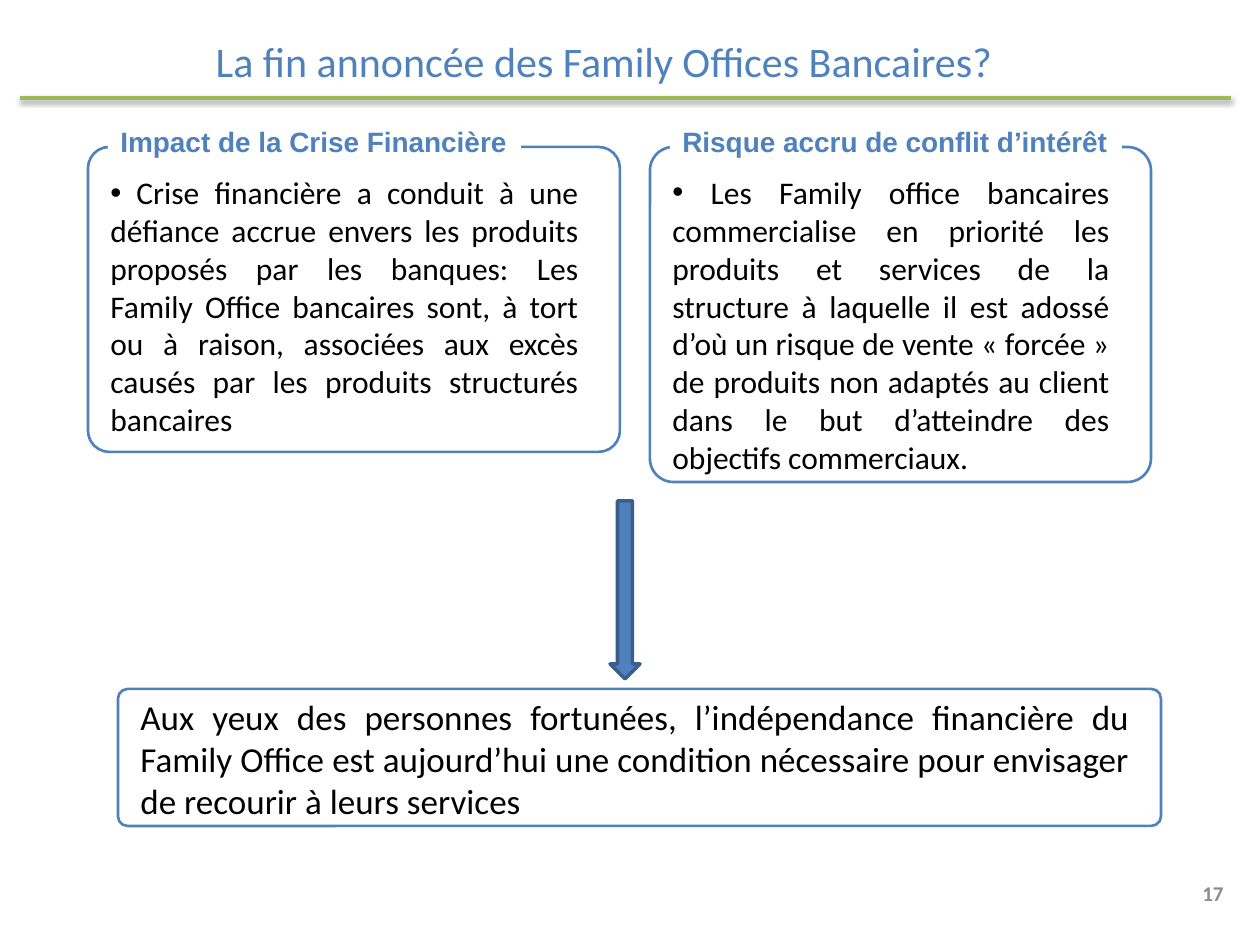
from dataclasses import dataclass

from lxml.etree import SubElement
from pptx import Presentation
from pptx.dml.color import RGBColor
from pptx.enum.shapes import MSO_CONNECTOR, MSO_SHAPE
from pptx.enum.text import MSO_ANCHOR, PP_ALIGN
from pptx.oxml.ns import qn
from pptx.util import Pt

SCALE = 914400 / 126


@dataclass(frozen=True)
class Theme:
    blue: str = "4F81BD"
    navy: str = "3A5F8C"
    green: str = "9BBB59"
    white: str = "FFFFFF"
    black: str = "000000"
    gray: str = "8C8C8C"
    font: str = "Calibri"
    label: str = "Arial"
    title: int = 24
    head: int = 16
    body: int = 18
    close: int = 20
    page: int = 12


THEME = Theme()


def emu(*sizes):
    return [round(size * SCALE) for size in sizes]


def color(code):
    return RGBColor.from_string(code)


def add_text(slide, box, text, size=THEME.body, ink=THEME.black, font=THEME.font,
             bold=False, align=PP_ALIGN.LEFT, anchor=MSO_ANCHOR.TOP,
             wrap=True, bullet=False, fill=None):
    shape = slide.shapes.add_textbox(*emu(*box))
    if fill:
        shape.fill.solid()
        shape.fill.fore_color.rgb = color(fill)
    frame = shape.text_frame
    frame.word_wrap = wrap
    frame.vertical_anchor = anchor
    para = frame.paragraphs[0]
    para.alignment = align
    if bullet:
        props = para._p.get_or_add_pPr()
        SubElement(props, qn("a:buFont"), typeface="Arial")
        SubElement(props, qn("a:buChar"), char="•")
    run = para.add_run()
    run.text = text
    run.font.size = Pt(size)
    run.font.name = font
    run.font.bold = bold
    run.font.color.rgb = color(ink)


def add_form(slide, kind, box, line, width, fill=None):
    shape = slide.shapes.add_shape(kind, *emu(*box))
    shape.shadow.inherit = False
    if fill:
        shape.fill.solid()
        shape.fill.fore_color.rgb = color(fill)
    else:
        shape.fill.background()
    shape.line.color.rgb = color(line)
    shape.line.width = Pt(width)
    return shape


def add_frame(slide, box):
    frame = add_form(slide, MSO_SHAPE.ROUNDED_RECTANGLE, box, THEME.blue, 1.5)
    frame.adjustments[0] = 0.07


def add_header(slide, box, text):
    left, top, width, height = box
    add_text(slide, (left + 174, top, 820, 63), text, size=THEME.title,
             ink=THEME.blue, align=PP_ALIGN.CENTER, wrap=False)
    base = top + height
    rule = slide.shapes.add_connector(
        MSO_CONNECTOR.STRAIGHT, *emu(left, base, left + width, base))
    rule.line.color.rgb = color(THEME.green)
    rule.line.width = Pt(2)
    effects = SubElement(rule._element.spPr, qn("a:effectLst"))
    shadow = SubElement(effects, qn("a:outerShdw"), blurRad="40000",
                        dist="20000", dir="5400000", rotWithShape="0")
    tint = SubElement(shadow, qn("a:srgbClr"), val=THEME.black)
    SubElement(tint, qn("a:alpha"), val="38000")


def add_panel(slide, box, head, span, text):
    left, top, width, height = box
    add_frame(slide, box)
    add_text(slide, (left + 20, top - 29, span, 84), head, size=THEME.head,
             ink=THEME.blue, font=THEME.label, bold=True, fill=THEME.white)
    add_text(slide, (left + 10, top + 20, width - 39, height - 20), text,
             align=PP_ALIGN.JUSTIFY, bullet=True)


def add_close(slide, box, text):
    left, top, width, height = box
    add_frame(slide, box)
    add_text(slide, (left + 10, top, width - 29, height), text,
             size=THEME.close, align=PP_ALIGN.JUSTIFY)


def main():
    deck = Presentation()
    deck.slide_width, deck.slide_height = emu(1260, 945)
    slide = deck.slides.add_slide(deck.slide_layouts[6])
    add_text(slide, (1152, 857, 84, 72), "17", size=THEME.page, ink=THEME.gray,
             bold=True, align=PP_ALIGN.RIGHT, anchor=MSO_ANCHOR.MIDDLE)
    add_header(slide, (20, 29, 1211, 69),
               "La fin annoncée des Family Offices Bancaires?")
    add_panel(slide, (88, 147, 532, 305), "Impact de la Crise Financière", 413,
              " Crise financière a conduit à une défiance accrue envers les "
              "produits proposés par les banques: Les Family Office bancaires "
              "sont, à tort ou à raison, associées aux excès causés par les "
              "produits structurés bancaires")
    add_panel(slide, (650, 147, 501, 335), "Risque accru de conflit d’intérêt", 452,
              " Les Family office bancaires commercialise en priorité les "
              "produits et services de la structure à laquelle il est adossé "
              "d’où un risque de vente « forcée » de produits non adaptés au "
              "client dans le but d’atteindre des objectifs commerciaux.")
    add_close(slide, (118, 689, 1043, 137),
              "Aux yeux des personnes fortunées, l’indépendance financière du "
              "Family Office est aujourd’hui une condition nécessaire pour "
              "envisager de recourir à leurs services")
    add_form(slide, MSO_SHAPE.DOWN_ARROW, (610, 501, 30, 178),
             THEME.navy, 2, fill=THEME.blue)
    deck.save("out.pptx")


if __name__ == "__main__":
    main()
